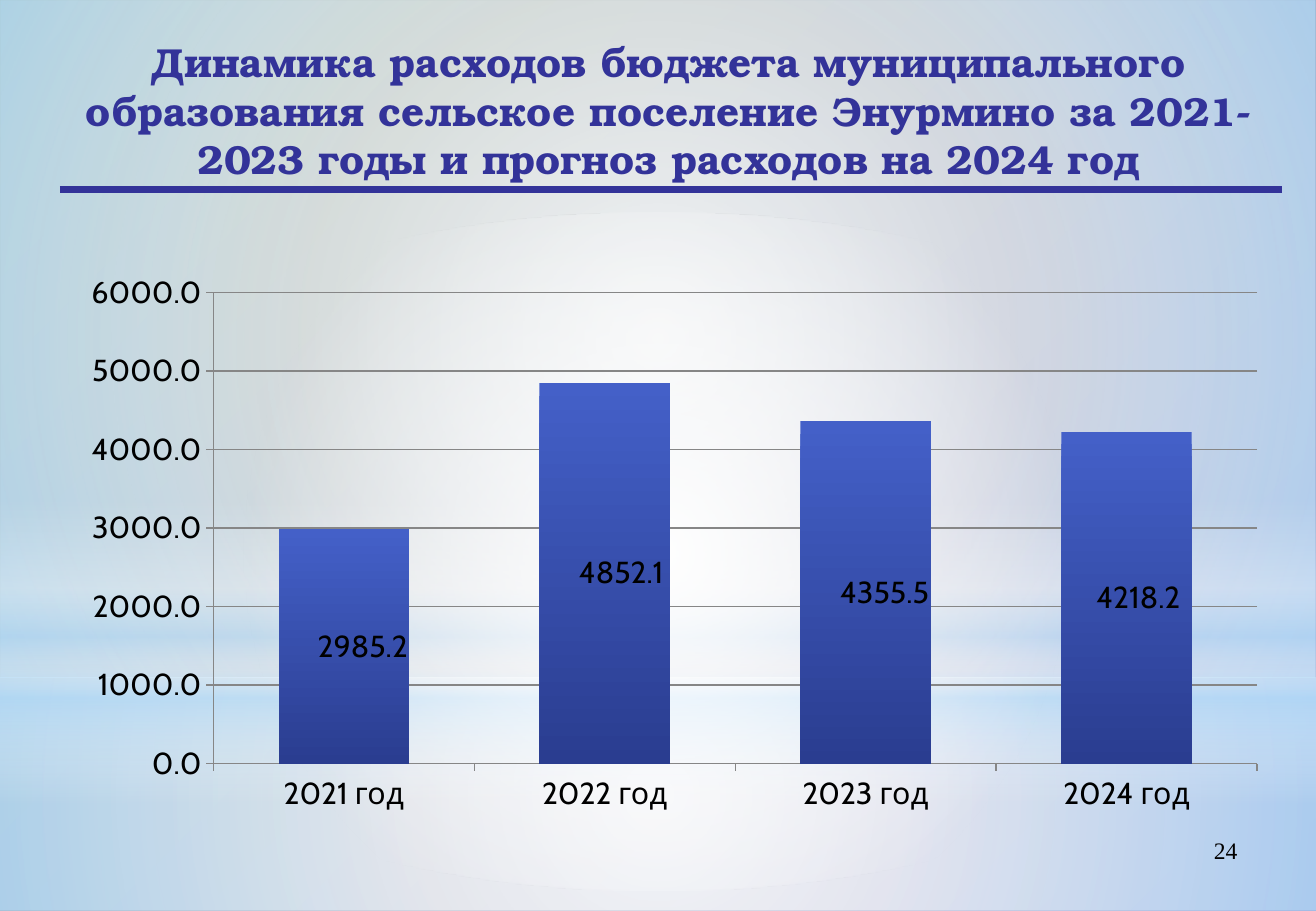
import lxml.etree
import pptx
import pptx.chart.data
import pptx.dml.color
import pptx.enum.chart
import pptx.enum.shapes
import pptx.enum.text
import pptx.oxml.ns
import pptx.util

Cm = pptx.util.Cm
Pt = pptx.util.Pt
RGBColor = pptx.dml.color.RGBColor
Shapes = pptx.enum.shapes.MSO_SHAPE
Align = pptx.enum.text.PP_ALIGN
qn = pptx.oxml.ns.qn

INDIGO = RGBColor(0x33, 0x33, 0x99)
BLACK = RGBColor(0, 0, 0)
GRAY = RGBColor(0x86, 0x86, 0x86)
WHITE = RGBColor(0xFF, 0xFF, 0xFF)
SKY = RGBColor(0xB4, 0xDC, 0xFA)
SAGE = RGBColor(0x96, 0xAB, 0x94)
PERIWINKLE = RGBColor(0x84, 0x88, 0xC4)
BAR_TOP = RGBColor(0x44, 0x60, 0xC8)
BAR_BOTTOM = RGBColor(0x2A, 0x3D, 0x90)

WIDTH, HEIGHT = 27.53, 19.05
EXPENSES = {"2021 год": 2985.2, "2022 год": 4852.1, "2023 год": 4355.5, "2024 год": 4218.2}
LABEL_SHIFTS = [0.016, 0.014, 0.016, 0.01]


def add_child(parent, tag, **attributes):
    child = lxml.etree.SubElement(parent, qn(tag))
    for name, value in attributes.items():
        child.set(name, str(value))
    return child


def make_layout(**values):
    layout = lxml.etree.Element(qn("c:layout"))
    manual = add_child(layout, "c:manualLayout")
    for name, value in values.items():
        add_child(manual, f"c:{name}", val=value)
    return layout


def paint_gradient(fill, root, stops, angle=None):
    fill.gradient()
    gradient = root.find(".//" + qn("a:gradFill"))
    for child in list(gradient):
        gradient.remove(child)
    stop_list = add_child(gradient, "a:gsLst")
    for position, color, opacity in stops:
        stop = add_child(stop_list, "a:gs", pos=position * 1000)
        solid = add_child(stop, "a:srgbClr", val=color)
        if opacity < 100:
            add_child(solid, "a:alpha", val=opacity * 1000)
    if angle is None:
        circle = add_child(gradient, "a:path", path="circle")
        add_child(circle, "a:fillToRect", l=50000, t=50000, r=50000, b=50000)
    else:
        add_child(gradient, "a:lin", ang=angle * 60000, scaled=0)


class BudgetSlide:
    """Hold the style and the current slide, with a method for each kind of element."""

    def __init__(self, presentation):
        self.slide = presentation.slides.add_slide(presentation.slide_layouts[6])
        self.accent = INDIGO
        self.chart_font = "Cabin"

    def background(self, stops, angle):
        paint_gradient(self.slide.background.fill, self.slide.element, stops, angle)

    def glow(self, kind, top, height, stops, angle=None):
        shape = self.slide.shapes.add_shape(kind, Cm(0), Cm(top), Cm(WIDTH), Cm(height))
        shape.shadow.inherit = False
        shape.line.fill.background()
        paint_gradient(shape.fill, shape.element, stops, angle)

    def text(self, words, left, top, width, height, font, size, color, align, anchor, bold=False):
        box = self.slide.shapes.add_textbox(Cm(left), Cm(top), Cm(width), Cm(height))
        frame = box.text_frame
        frame.word_wrap = True
        frame.vertical_anchor = anchor
        paragraph = frame.paragraphs[0]
        paragraph.text = words
        paragraph.alignment = align
        paragraph.font.name = font
        paragraph.font.size = Pt(size)
        paragraph.font.bold = bold
        paragraph.font.color.rgb = color

    def rule(self, left, right, top):
        line = self.slide.shapes.add_connector(
            pptx.enum.shapes.MSO_CONNECTOR.STRAIGHT, Cm(left), Cm(top), Cm(right), Cm(top))
        line.line.color.rgb = self.accent
        line.line.width = Pt(3.75)
        add_child(line.element.spPr, "a:effectLst")

    def style_font(self, font):
        font.name = self.chart_font
        font.size = Pt(18)
        font.color.rgb = BLACK

    def column_chart(self, values, shifts, left, top, width, height):
        data = pptx.chart.data.CategoryChartData(number_format="0.0")
        data.categories = list(values)
        data.add_series("Расходы", list(values.values()))
        chart = self.slide.shapes.add_chart(
            pptx.enum.chart.XL_CHART_TYPE.COLUMN_STACKED,
            Cm(left), Cm(top), Cm(width), Cm(height), data).chart
        chart.has_legend = False
        chart.has_title = False
        self.style_font(chart.font)
        plot = chart.plots[0]
        plot.gap_width = 100
        plot.overlap = 100
        plot.vary_by_categories = False

        for axis in (chart.category_axis, chart.value_axis):
            axis.major_tick_mark = pptx.enum.chart.XL_TICK_MARK.OUTSIDE
            axis.minor_tick_mark = pptx.enum.chart.XL_TICK_MARK.NONE
            axis.format.line.color.rgb = GRAY
            axis.format.line.width = Pt(0.75)
            self.style_font(axis.tick_labels.font)
        axis = chart.value_axis
        axis.minimum_scale = 0
        axis.maximum_scale = 6000
        axis.major_unit = 1000
        axis.tick_labels.number_format = "0.0"
        axis.tick_labels.number_format_is_linked = False
        axis.major_gridlines.format.line.color.rgb = GRAY
        axis.major_gridlines.format.line.width = Pt(0.75)

        series = plot.series[0]
        paint_gradient(series.format.fill, chart.element,
                       [(0, BAR_TOP, 100), (100, BAR_BOTTOM, 100)], 90)
        labels = series.data_labels
        labels.show_value = True
        labels.number_format = "0.0"
        labels.number_format_is_linked = False
        self.style_font(labels.font)
        for index in range(len(values)):
            label = series.points[index].data_label
            label.position = pptx.enum.chart.XL_LABEL_POSITION.CENTER
            self.style_font(label.font)
        for label, shift in zip(chart.element.iter(qn("c:dLbl")), shifts):
            label.insert(1, make_layout(x=shift, y=0))

        plot_area = chart.element.find(".//" + qn("c:plotArea"))
        for layout in plot_area.findall(qn("c:layout")):
            plot_area.remove(layout)
        plot_area.insert(0, make_layout(layoutTarget="inner", xMode="edge", yMode="edge",
                                        x=0.116, y=0.092, w=0.884, h=0.746))


def main():
    presentation = pptx.Presentation()
    presentation.slide_width = Cm(WIDTH)
    presentation.slide_height = Cm(HEIGHT)
    page = BudgetSlide(presentation)
    page.background([(0, SAGE, 100), (100, PERIWINKLE, 100)], 45)
    page.glow(Shapes.RECTANGLE, 14.17, 4.88, [(0, WHITE, 91), (37, WHITE, 76), (100, SKY, 79)])
    page.glow(Shapes.RECTANGLE, 0, 14.17, [(0, WHITE, 89), (48, WHITE, 62), (100, SKY, 79)])
    page.glow(Shapes.RECTANGLE, 10.46, 6.35, [
        (0, WHITE, 0), (29, WHITE, 30), (45, SKY, 40),
        (55, WHITE, 26), (65, SKY, 60), (100, WHITE, 0)], 90)
    page.glow(Shapes.OVAL, 4.45, 14.17, [(0, WHITE, 100), (56, WHITE, 0)])
    page.text("24", 19.71, 17.35, 6.43, 1.32, "Times New Roman", 14, BLACK,
              Align.RIGHT, pptx.enum.text.MSO_ANCHOR.TOP)
    page.text("Динамика расходов бюджета муниципального образования сельское поселение "
              "Энурмино за 2021-2023 годы и прогноз расходов на 2024 год",
              0.46, 0.75, 27.05, 3.1, "TeX Gyre Bonum", 24, INDIGO,
              Align.CENTER, pptx.enum.text.MSO_ANCHOR.MIDDLE, bold=True)
    page.rule(1.25, 26.82, 3.96)
    page.column_chart(EXPENSES, LABEL_SHIFTS, 1.6, 4.9, 24.71, 13.21)
    presentation.save("out.pptx")


if __name__ == "__main__":
    main()
